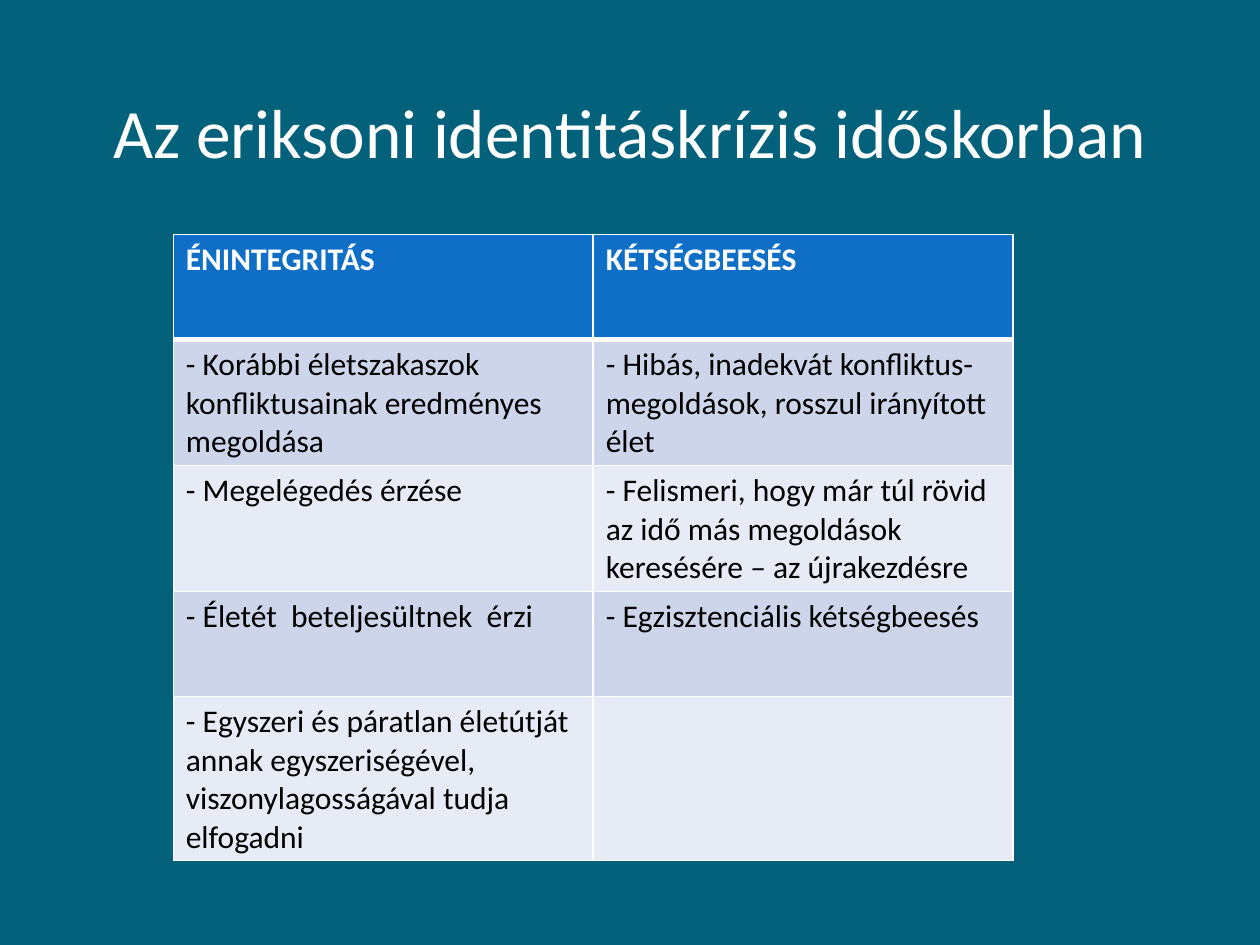
from lxml.etree import SubElement
from pptx import Presentation
from pptx.dml.color import RGBColor
from pptx.enum.text import MSO_ANCHOR, PP_ALIGN
from pptx.oxml.ns import qn
from pptx.util import Pt

WHITE, BLACK = "FFFFFF", "000000"
HEAD, BANDS = "0F6FC6", ("CCD5EA", "E7EBF5")
ROWS = [
    ("ÉNINTEGRITÁS", "KÉTSÉGBEESÉS"),
    ("- Korábbi életszakaszok konfliktusainak eredményes megoldása",
     "- Hibás, inadekvát konfliktus- megoldások, rosszul irányított élet"),
    ("- Megelégedés érzése",
     "- Felismeri, hogy már túl rövid az idő más megoldások keresésére – az újrakezdésre"),
    ("- Életét  beteljesültnek  érzi", "- Egzisztenciális kétségbeesés"),
    ("- Egyszeri és páratlan életútját annak egyszeriségével, viszonylagosságával tudja elfogadni",
     ""),
]


def paint(target, color):
    target.solid()
    target.fore_color.rgb = RGBColor.from_string(color)


def write(frame, text, color, **style):
    para = frame.paragraphs[0]
    if text:
        para.add_run().text = text
    for font in [para.font] + [run.font for run in para.runs]:
        for name, value in {"name": "Calibri", **style}.items():
            setattr(font, name, value)
        paint(font.fill, color)
    return para


def border(cell, widths):
    props = cell._tc.get_or_add_tcPr()
    for side, width in widths.items():
        line = SubElement(props, qn(f"a:ln{side}"), w=str(Pt(width)))
        fill = SubElement(line, qn("a:solidFill"))
        SubElement(fill, qn("a:srgbClr"), val=WHITE)


def add_title(slide, text):
    box = slide.shapes.add_textbox(Pt(54), Pt(32), Pt(612), Pt(85))
    frame = box.text_frame
    frame.word_wrap = True
    frame.vertical_anchor = MSO_ANCHOR.MIDDLE
    write(frame, text, WHITE, size=Pt(39.6)).alignment = PP_ALIGN.CENTER


def add_grid(slide, rows):
    shape = slide.shapes.add_table(
        len(rows), 2, Pt(99), Pt(134), Pt(480), Pt(60 * len(rows)))
    for i, row in enumerate(rows):
        head = i == 0
        for j, text in enumerate(row):
            cell = shape.table.cell(i, j)
            border(cell, {"L": 1, "R": 1, "T": 3 if i == 1 else 1,
                          "B": 3 if head else 1})
            paint(cell.fill, HEAD if head else BANDS[(i - 1) % 2])
            write(cell.text_frame, text, WHITE if head else BLACK,
                  size=Pt(18), bold=head)


def main():
    deck = Presentation()
    deck.slide_width, deck.slide_height = Pt(720), Pt(540)
    slide = deck.slides.add_slide(deck.slide_layouts[6])
    paint(slide.background.fill, "04617B")
    add_title(slide, "Az eriksoni identitáskrízis időskorban")
    add_grid(slide, ROWS)
    deck.save("out.pptx")


if __name__ == "__main__":
    main()
